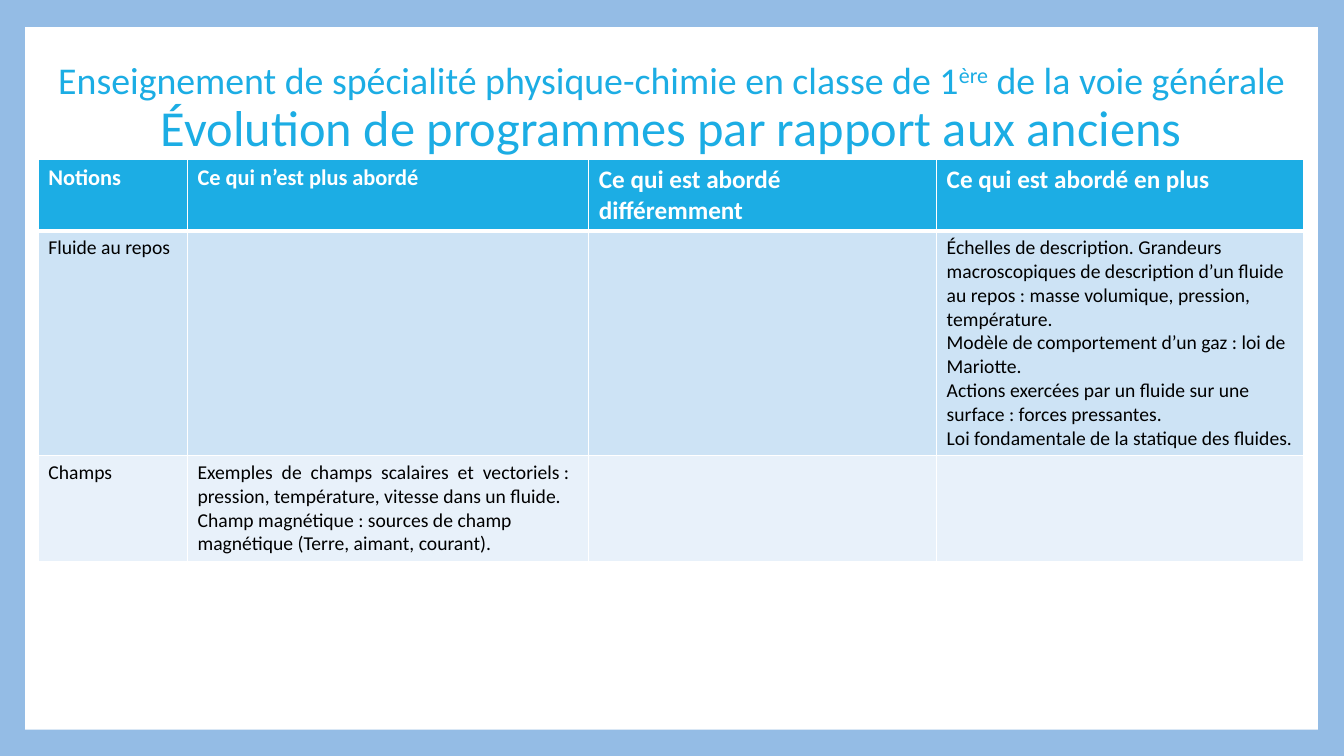
"""Build the slide comparing the new physics-chemistry syllabus with the former one."""
from lxml.etree import SubElement
from pptx import Presentation
from pptx.dml.color import RGBColor
from pptx.enum.shapes import MSO_SHAPE
from pptx.enum.text import MSO_ANCHOR, MSO_AUTO_SIZE, PP_ALIGN
from pptx.oxml.ns import qn
from pptx.util import Inches, Pt

BLUE, WHITE, BLACK = "1CADE4", "FFFFFF", "000000"
ROW_FILLS = [BLUE, "CDE3F5", "E8F1FA"]
COLUMN_WIDTHS = [1.48, 3.98, 3.45, 3.64]
ROW_HEIGHTS = [0.7, 2.2, 1.04]
HEADER_SIZES = [16, 16, 18, 18]
ROWS = [
    [
        ["Notions"],
        ["Ce qui n’est plus abordé"],
        ["Ce qui est abordé différemment"],
        ["Ce qui est abordé en plus"],
    ],
    [
        ["Fluide au repos"],
        [],
        [],
        [
            "Échelles de description. Grandeurs macroscopiques de description d’un fluide "
            "au repos : masse volumique, pression, température.",
            "Modèle de comportement d’un gaz : loi de Mariotte.",
            "Actions exercées par un fluide sur une surface : forces pressantes.",
            "Loi fondamentale de la statique des fluides.",
        ],
    ],
    [
        ["Champs"],
        [
            "Exemples  de  champs  scalaires  et  vectoriels :  pression, température, "
            "vitesse dans un fluide.",
            "Champ magnétique : sources de champ magnétique (Terre, aimant, courant).",
        ],
        [],
        [],
    ],
]


def paint(fill, color):
    fill.solid()
    fill.fore_color.rgb = RGBColor.from_string(color)


def add_text(paragraph, text, size=14, color=BLACK, bold=False, baseline=0):
    run = paragraph.add_run()
    run.text = text
    run.font.name = "Calibri"
    run.font.size = Pt(size)
    run.font.bold = bold
    paint(run.font.fill, color)
    if baseline:
        run.font._element.set("baseline", str(baseline * 1000))


presentation = Presentation()
presentation.slide_width = Inches(13.33)
presentation.slide_height = Inches(7.5)
slide = presentation.slides.add_slide(presentation.slide_layouts[5])
paint(slide.background.fill, "94BCE5")

panel = slide.shapes.add_shape(
    MSO_SHAPE.RECTANGLE, Inches(0.25), Inches(0.27), Inches(12.82), Inches(6.97)
)
panel.shadow.inherit = False
paint(panel.fill, WHITE)
panel.line.fill.background()

table = slide.shapes.add_table(
    len(ROWS), len(COLUMN_WIDTHS), Inches(0.38), Inches(1.58),
    Inches(sum(COLUMN_WIDTHS)), Inches(sum(ROW_HEIGHTS)),
).table
for column, width in zip(table.columns, COLUMN_WIDTHS):
    column.width = Inches(width)

for row_index, (row, height) in enumerate(zip(ROWS, ROW_HEIGHTS)):
    table.rows[row_index].height = Inches(height)
    is_header = row_index == 0
    for column_index, lines in enumerate(row):
        cell = table.cell(row_index, column_index)
        properties = cell._tc.get_or_add_tcPr()
        for side in ("lnL", "lnR", "lnT", "lnB"):
            under_header = (row_index, side) in ((0, "lnB"), (1, "lnT"))
            border = SubElement(properties, qn(f"a:{side}"), w=str(Pt(3 if under_header else 1)))
            border_fill = SubElement(border, qn("a:solidFill"))
            SubElement(border_fill, qn("a:srgbClr"), val=WHITE)
        paint(cell.fill, ROW_FILLS[row_index])
        for line_index, line in enumerate(lines):
            frame = cell.text_frame
            paragraph = frame.add_paragraph() if line_index else frame.paragraphs[0]
            add_text(
                paragraph, line,
                size=HEADER_SIZES[column_index] if is_header else 14,
                color=WHITE if is_header else BLACK,
                bold=is_header,
            )

title = slide.shapes.title
title.left, title.top = Inches(0.15), Inches(0.39)
title.width, title.height = Inches(13.02), Inches(1.39)
slide.shapes._spTree.append(title._element)
title.text_frame.word_wrap = True
title.text_frame.auto_size = MSO_AUTO_SIZE.NONE
title.text_frame.vertical_anchor = MSO_ANCHOR.MIDDLE
heading = title.text_frame.paragraphs[0]
heading.alignment = PP_ALIGN.CENTER
heading.line_spacing = 0.9
add_text(heading, "Enseignement de spécialité physique-chimie en classe de 1", size=27, color=BLUE)
add_text(heading, "ère", size=27, color=BLUE, baseline=30)
add_text(heading, " de la voie générale", size=27, color=BLUE)
heading.add_line_break()
add_text(heading, "Évolution de programmes par rapport aux anciens", size=36, color=BLUE)

presentation.save("out.pptx")
